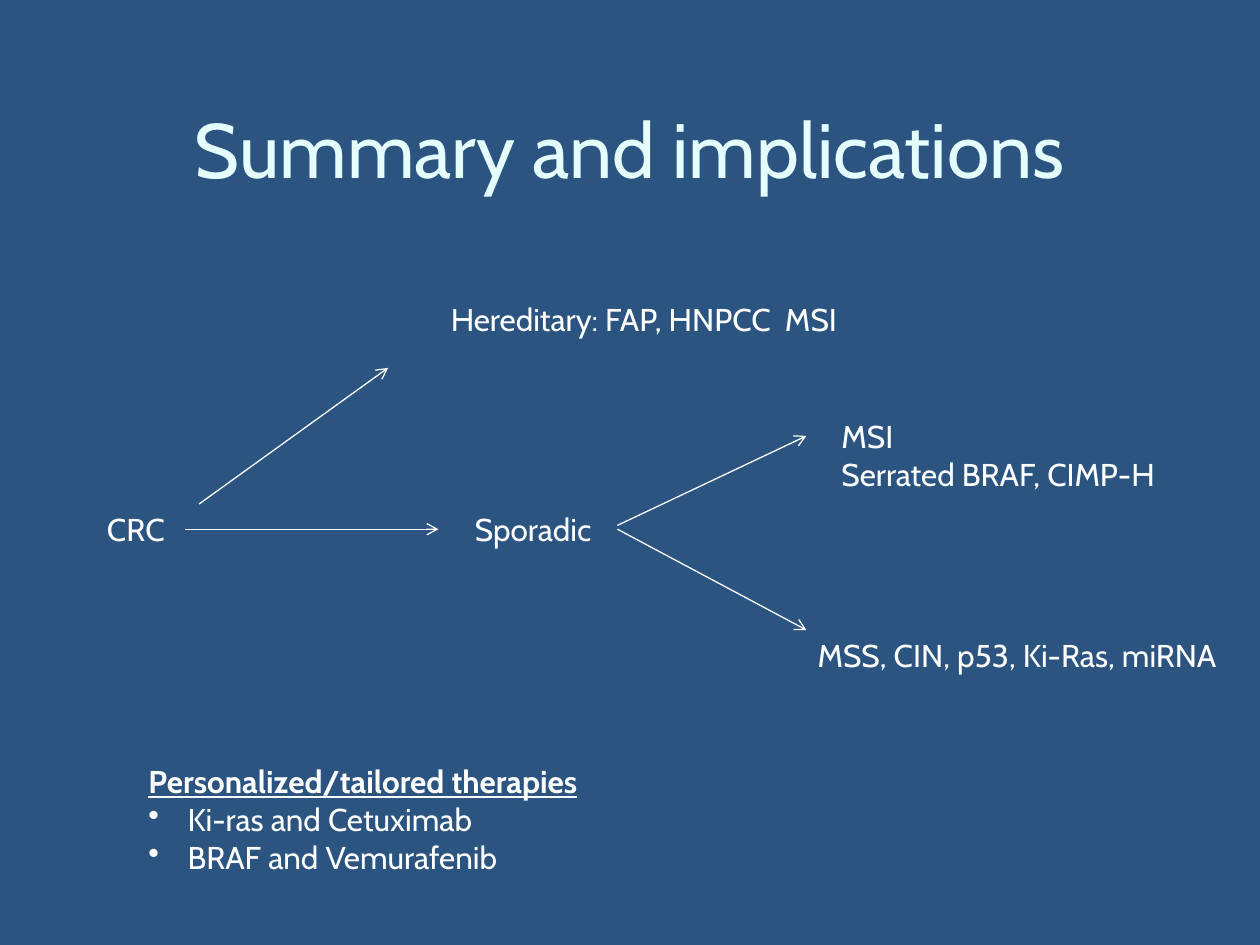
from lxml.etree import SubElement
from pptx import Presentation
from pptx.dml.color import RGBColor
from pptx.enum.shapes import MSO_CONNECTOR as LINK
from pptx.enum.text import MSO_ANCHOR as ANCHOR, MSO_AUTO_SIZE as FIT, PP_ALIGN as ALIGN
from pptx.oxml.ns import qn
from pptx.util import Inches, Pt

NAVY = RGBColor(0x2B, 0x54, 0x81)
ICE = RGBColor(0xE5, 0xFF, 0xFF)
WHITE = RGBColor(0xFF, 0xFF, 0xFF)
FACE = "Cabin"

WIDTH, HEIGHT = Inches(10), Inches(7.5)
COL, ROW = WIDTH / 10, HEIGHT / 7.5
LINE = 0.4     # height of a one-line label, in rows
MID = 4        # row of the CRC and Sporadic labels
AXIS = MID + LINE / 2
FORK = 4.9     # columns where the two sporadic branches start and end
TIP = 6.4

LABELS = [
    (0.75, MID, 0.66, LINE, ["CRC"]),
    (3.48, 2.33, 3.43, LINE, ["Hereditary: FAP, HNPCC  MSI"]),
    (3.67, MID, 1.15, LINE, ["Sporadic"]),
    (6.58, 3.26, 2.77, 0.71, ["MSI", "Serrated BRAF, CIMP-H"]),
    (6.39, 5, 3.57, LINE, ["MSS, CIN, p53, Ki-Ras, miRNA"]),
]
ARROWS = [
    (1.58, MID, 3.08, 2.92),
    (1.47, AXIS, 3.48, AXIS),
    (FORK, 4.17, TIP, 3.46),
    (FORK, AXIS, TIP, 5),
]
DRUGS = ["Ki-ras and Cetuximab", "BRAF and Vemurafenib"]


def grid(*cells):
    """Turn alternating columns and rows into lengths."""
    return [round(n * (ROW if i % 2 else COL)) for i, n in enumerate(cells)]


def write(para, text, size=18, color=WHITE, bold=False, line=False, mark=None, align=None):
    if mark:
        props = para._p.get_or_add_pPr()
        props.set("marL", str(Inches(0.31)))
        props.set("indent", str(-Inches(0.31)))
        SubElement(props, qn("a:buChar")).set("char", mark)
    if align is not None:
        para.alignment = align
    run = para.add_run()
    run.text = text
    font = run.font
    font.name, font.size = FACE, Pt(size)
    font.bold, font.underline = bold, line
    font.color.rgb = color


def add_box(slide, left, top, width, height):
    frame = slide.shapes.add_textbox(*grid(left, top, width, height)).text_frame
    frame.word_wrap = False
    frame.auto_size = FIT.SHAPE_TO_FIT_TEXT
    return frame


def add_label(slide, left, top, width, height, lines):
    frame = add_box(slide, left, top, width, height)
    for i, text in enumerate(lines):
        write(frame.add_paragraph() if i else frame.paragraphs[0], text)


def add_arrow(slide, *ends):
    arrow = slide.shapes.add_connector(LINK.STRAIGHT, *grid(*ends))
    arrow.line.color.rgb = WHITE
    arrow.line.width = Pt(0.75)
    SubElement(arrow.line._get_or_add_ln(), qn("a:tailEnd")).set("type", "arrow")
    SubElement(arrow._element.spPr, qn("a:effectLst"))


def add_title(slide, text):
    title = slide.shapes.title
    title.left, title.top, title.width, title.height = grid(0.5, 0.42, 9, 1.5)
    frame = title.text_frame
    frame.vertical_anchor = ANCHOR.MIDDLE
    write(frame.paragraphs[0], text, size=44, color=ICE, align=ALIGN.CENTER)


def add_drugs(slide):
    frame = add_box(slide, 1.08, 6, 4.21, 1.01)
    write(frame.paragraphs[0], "Personalized/tailored therapies", bold=True, line=True)
    for drug in DRUGS:
        write(frame.add_paragraph(), drug, mark="•")


def main():
    deck = Presentation()
    deck.slide_width, deck.slide_height = WIDTH, HEIGHT
    slide = deck.slides.add_slide(deck.slide_layouts[5])
    fill = slide.background.fill
    fill.solid()
    fill.fore_color.rgb = NAVY
    add_title(slide, "Summary and implications")
    for label in LABELS:
        add_label(slide, *label)
    for ends in ARROWS:
        add_arrow(slide, *ends)
    add_drugs(slide)
    deck.save("out.pptx")


if __name__ == "__main__":
    main()
